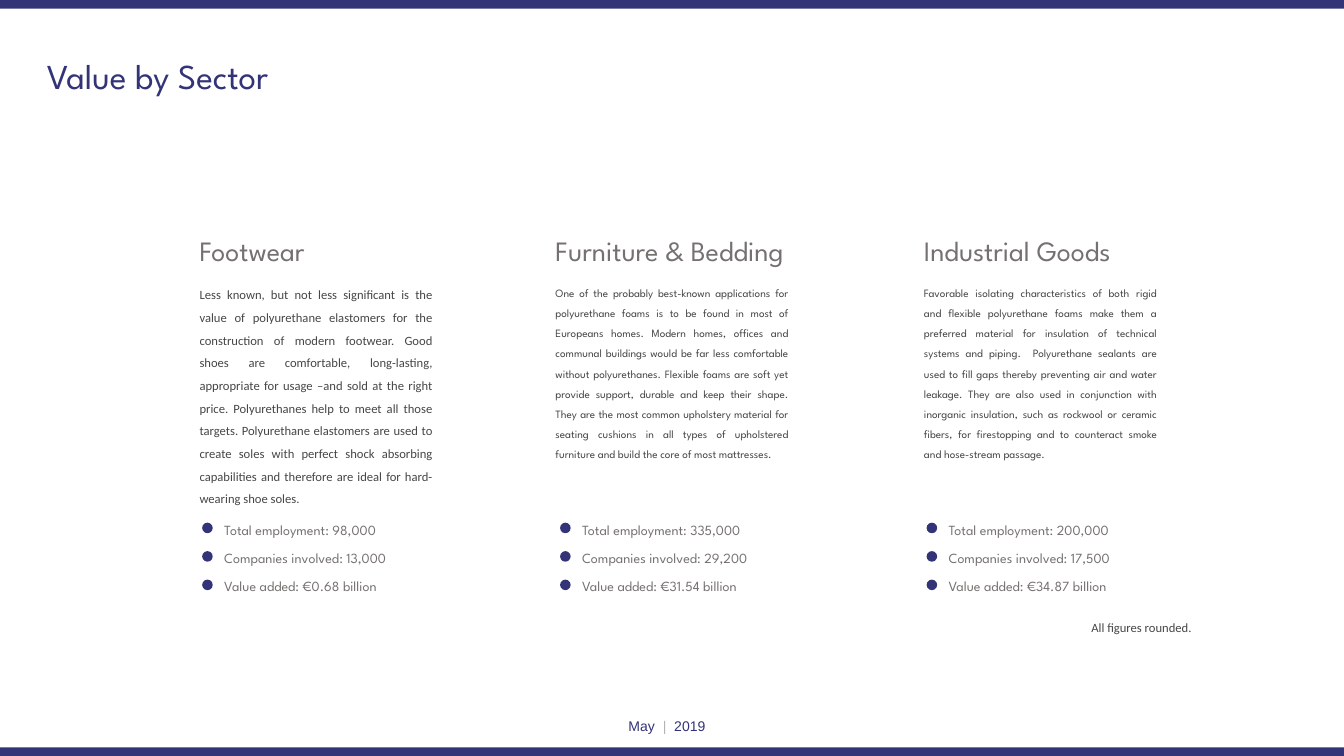
from pptx import Presentation
from pptx.dml.color import RGBColor
from pptx.enum import shapes, text
from pptx.util import Inches, Pt

NAVY, GREY, DARK, PALE = "333377", "767171", "464646", "B4B4B4"
SANS, BODY = "League Spartan", "Calibri"
WIDE, HIGH = 26.66, 15

# Heading, left edge, dot edge, body font and size, body, figures
SECTORS = [
    ("Footwear", 3.86, 4.01, BODY, 18,
     "Less known, but not less significant is the value of polyurethane "
     "elastomers for the construction of modern footwear. Good shoes are "
     "comfortable, long-lasting, appropriate for usage –and sold at the right "
     "price. Polyurethanes help to meet all those targets. Polyurethane "
     "elastomers are used to create soles with perfect shock absorbing "
     "capabilities and therefore are ideal for hard-wearing shoe soles.",
     ("98,000", "13,000", "€0.68 billion")),
    ("Furniture & Bedding", 10.92, 11.11, SANS, 16,
     "One of the probably best-known applications for polyurethane foams is to "
     "be found in most of Europeans homes. Modern homes, offices and communal "
     "buildings would be far less comfortable without polyurethanes. Flexible "
     "foams are soft yet provide support, durable and keep their shape. They "
     "are the most common upholstery material for seating cushions in all "
     "types of upholstered furniture and build the core of most mattresses.",
     ("335,000", "29,200", "€31.54 billion")),
    ("Industrial Goods", 18.23, 18.38, SANS, 16,
     "Favorable isolating characteristics of both rigid and flexible "
     "polyurethane foams make them a preferred material for insulation of "
     "technical systems and piping.  Polyurethane sealants are used to fill "
     "gaps thereby preventing air and water leakage. They are also used in "
     "conjunction with inorganic insulation, such as rockwool or ceramic "
     "fibers, for firestopping and to counteract smoke and hose-stream passage.",
     ("200,000", "17,500", "€34.87 billion")),
]
LABELS = ("Total employment", "Companies involved", "Value added")


def paint(hue):
    return RGBColor.from_string(hue)


def style(run, size, face, hue):
    run.font.size = Pt(size)
    run.font.name = face
    run.font.color.rgb = paint(hue)


def add_text(slide, words, box, size, face, hue, wrap=True):
    frame = slide.shapes.add_textbox(*map(Inches, box)).text_frame
    frame.word_wrap = wrap
    frame.text = words
    para = frame.paragraphs[0]
    style(para.runs[0], size, face, hue)
    return para


def add_solid(slide, kind, box):
    shape = slide.shapes.add_shape(kind, *map(Inches, box))
    shape.shadow.inherit = False
    shape.fill.solid()
    shape.fill.fore_color.rgb = paint(NAVY)
    shape.line.fill.background()


def add_title(slide, words):
    title = slide.shapes.title
    title.left, title.top = Inches(0.83), Inches(1.03)
    title.width, title.height = Inches(7.09), Inches(0.94)
    frame = title.text_frame
    frame.text = words
    frame.auto_size = text.MSO_AUTO_SIZE.NONE
    frame.vertical_anchor = text.MSO_ANCHOR.TOP
    para = frame.paragraphs[0]
    para.alignment = text.PP_ALIGN.LEFT
    style(para.runs[0], 50, SANS, NAVY)


def add_frame(slide):
    # Bars at the top and bottom edges
    for top in (0, HIGH - 0.17):
        add_solid(slide, shapes.MSO_SHAPE.RECTANGLE, (0, top, WIDE, 0.17))
    # Date line
    para = add_text(slide, "May", (9.02, 14.19, 8.42, 0.44), 20, "Arial", NAVY)
    para.alignment = text.PP_ALIGN.CENTER
    for words, hue in (("  | ", PALE), (" 2019", NAVY)):
        run = para.add_run()
        run.text = words
        style(run, 20, "Arial", hue)


def add_sector(slide, name, left, dot, face, size, body, figures):
    add_text(slide, name, (left, 4.58, 5.73, 0.77), 40, SANS, GREY)
    para = add_text(slide, body, (left, 5.5, 4.82, 4.6), size, face, DARK)
    para.alignment = text.PP_ALIGN.JUSTIFY
    para.line_spacing = 1.5
    # Key figures with their dots
    for row, (label, value) in enumerate(zip(LABELS, figures)):
        add_solid(slide, shapes.MSO_SHAPE.OVAL,
                  (dot, 10.37 + row * 0.565, 0.21, 0.21))
        add_text(slide, f"{label}: {value}",
                 (dot + 0.34, 10.29 + row * 0.56, 4.34, 0.44), 20, SANS, GREY)


def main():
    deck = Presentation()
    deck.slide_width, deck.slide_height = Inches(WIDE), Inches(HIGH)
    slide = deck.slides.add_slide(deck.slide_layouts[5])
    add_frame(slide)
    add_title(slide, "Value by Sector")
    for sector in SECTORS:
        add_sector(slide, *sector)
    add_text(slide, "All figures rounded.", (21.55, 12.25, 2.21, 0.4),
             18, BODY, DARK, wrap=False)
    deck.save("out.pptx")


if __name__ == "__main__":
    main()
